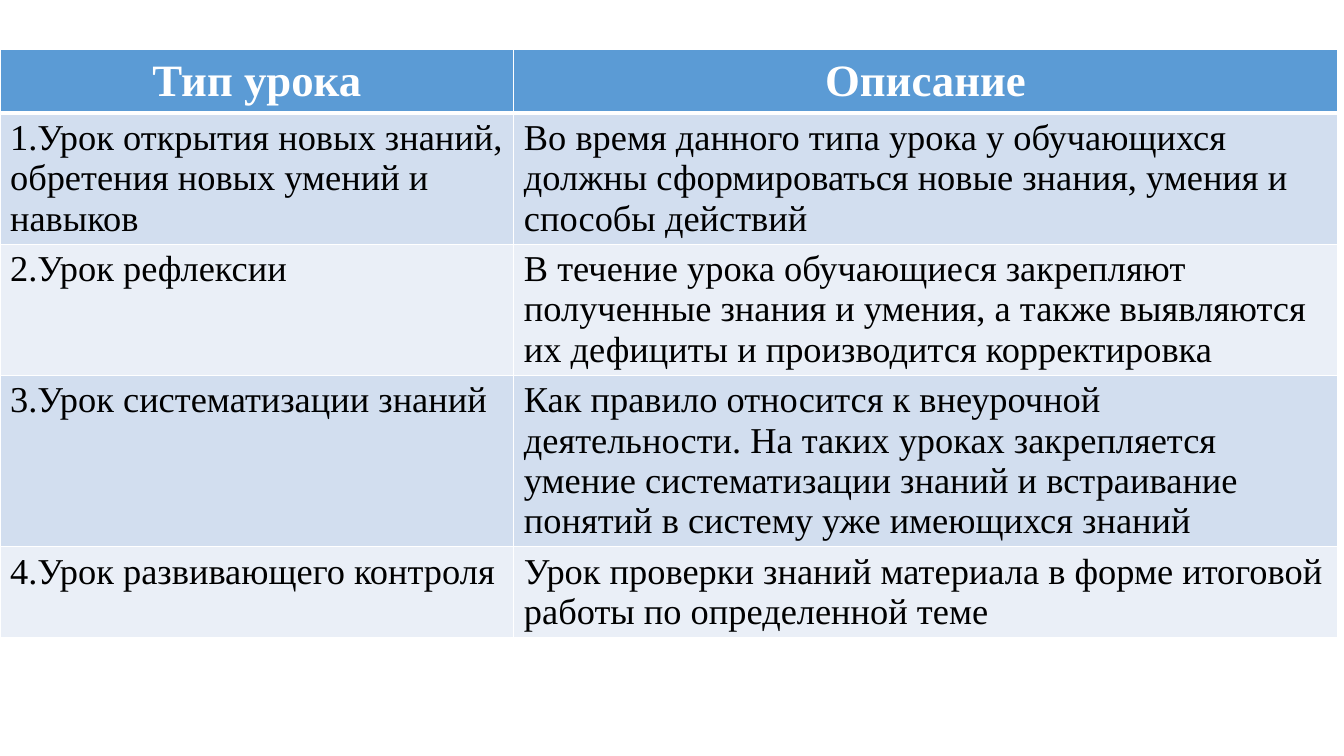
"""Build a slide with a table of lesson types and their descriptions."""
import pptx
import pptx.dml.color
import pptx.enum.text
import pptx.oxml
import pptx.oxml.ns
import pptx.util
from pptx.util import Cm

FONT = "Times New Roman"
HEADER = ("Тип урока", "Описание")
LESSONS = [
    ("1.Урок открытия новых знаний, обретения новых умений и навыков",
     "Во время данного типа урока у обучающихся должны сформироваться "
     "новые знания, умения и способы действий"),
    ("2.Урок рефлексии",
     "В течение урока обучающиеся закрепляют полученные знания и умения, "
     "а также выявляются их дефициты и производится корректировка"),
    ("3.Урок систематизации знаний",
     "Как правило относится к внеурочной деятельности. На таких уроках "
     "закрепляется умение систематизации знаний и встраивание понятий "
     "в систему уже имеющихся знаний"),
    ("4.Урок развивающего контроля",
     "Урок проверки знаний материала в форме итоговой работы "
     "по определенной теме"),
]
COL_WIDTHS = (12.95, 20.75)
ROW_HEIGHTS = (1.6, 3.3, 3.3, 4.3, 2.3)
TABLE_TOP = 1.25
HEADER_FILL = "5B9BD5"
BAND_FILLS = ("D2DEEF", "EAEFF7")


def rgb(value):
    return pptx.dml.color.RGBColor.from_string(value)


def set_borders(cell, bottom):
    tc_pr = cell._tc.get_or_add_tcPr()
    for side, width in (("L", 1), ("R", 1), ("T", 1), ("B", bottom)):
        tc_pr.append(pptx.oxml.parse_xml(
            f'<a:ln{side} {pptx.oxml.ns.nsdecls("a")} w="{pptx.util.Pt(width)}">'
            '<a:solidFill><a:srgbClr val="FFFFFF"/></a:solidFill>'
            f'</a:ln{side}>'))


def format_cell(cell, text, fill, is_header):
    set_borders(cell, 3 if is_header else 1)
    cell.fill.solid()
    cell.fill.fore_color.rgb = rgb(fill)
    cell.text_frame.text = text
    p = cell.text_frame.paragraphs[0]
    if is_header:
        cell.vertical_anchor = pptx.enum.text.MSO_ANCHOR.MIDDLE
        p.alignment = pptx.enum.text.PP_ALIGN.CENTER
    font = p.runs[0].font
    font.name = FONT
    font.size = pptx.util.Pt(32 if is_header else 26)
    font.bold = is_header
    font.color.rgb = rgb("FFFFFF" if is_header else "000000")


def main():
    prs = pptx.Presentation()
    prs.slide_width, prs.slide_height = Cm(33.87), Cm(19.05)
    s = prs.slides.add_slide(prs.slide_layouts[6])
    rows = [HEADER] + LESSONS
    table = s.shapes.add_table(
        len(rows), len(HEADER), Cm(0), Cm(TABLE_TOP),
        Cm(sum(COL_WIDTHS)), Cm(sum(ROW_HEIGHTS))).table
    for column, width in zip(table.columns, COL_WIDTHS):
        column.width = Cm(width)
    for i, (texts, height) in enumerate(zip(rows, ROW_HEIGHTS)):
        table.rows[i].height = Cm(height)
        fill = BAND_FILLS[(i - 1) % 2] if i else HEADER_FILL
        for j, text in enumerate(texts):
            format_cell(table.cell(i, j), text, fill, i == 0)
    prs.save("out.pptx")


if __name__ == "__main__":
    main()
